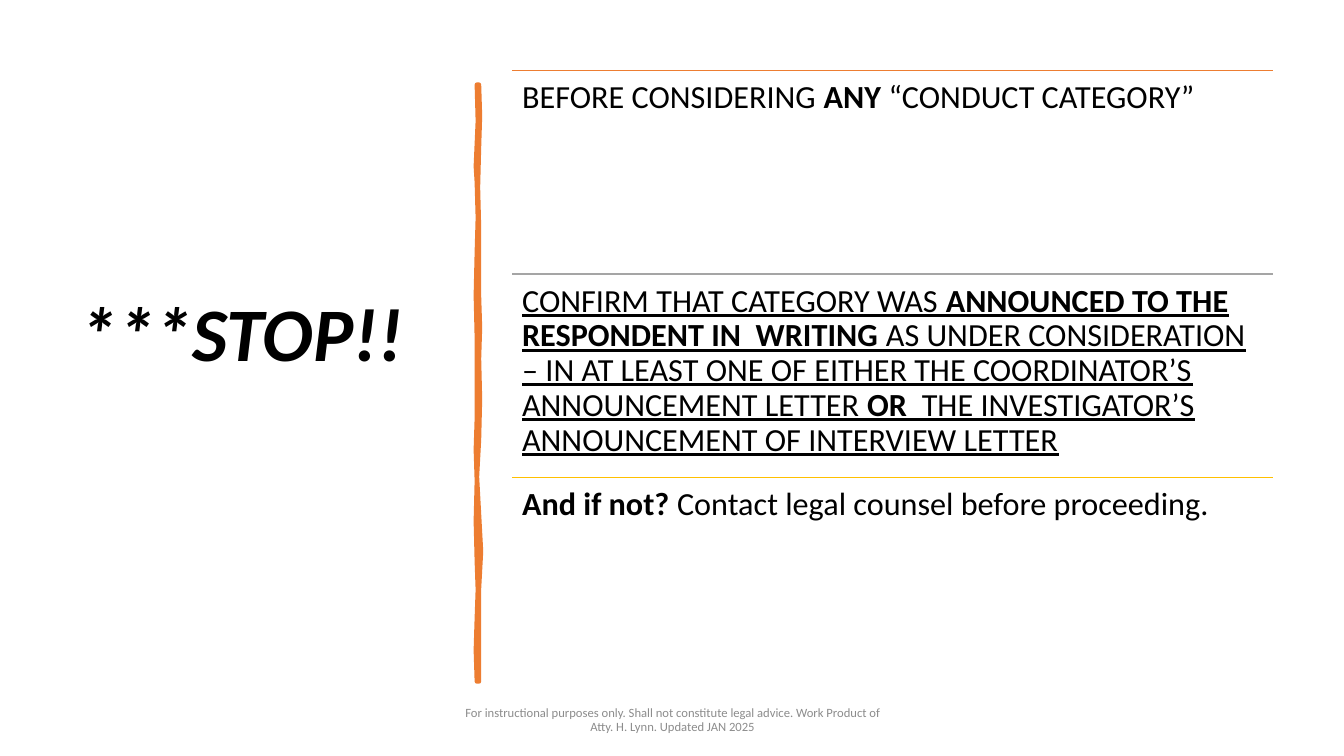
from lxml import etree
from pptx import Presentation
from pptx.dml.color import RGBColor
from pptx.enum.shapes import MSO_CONNECTOR
from pptx.enum.text import MSO_ANCHOR, MSO_AUTO_SIZE, PP_ALIGN
from pptx.oxml.ns import qn
from pptx.util import Inches, Pt

STRAIGHT = MSO_CONNECTOR.STRAIGHT
MIDDLE, TOP = MSO_ANCHOR.MIDDLE, MSO_ANCHOR.TOP
LEFT, CENTER = PP_ALIGN.LEFT, PP_ALIGN.CENTER
NO_FIT = MSO_AUTO_SIZE.NONE

BLACK = RGBColor(0x00, 0x00, 0x00)
MUTED = RGBColor(0x8C, 0x8C, 0x8C)
ORANGE = RGBColor(0xED, 0x7D, 0x31)
GRAY = RGBColor(0xA5, 0xA5, 0xA5)
GOLD = RGBColor(0xFF, 0xC0, 0x00)

TITLE_ONLY = 5
STEP_LEFT, STEP_TOP = 5.08, 0.7
STEP_WIDTH, STEP_HEIGHT = 7.55, 2.02

STEPS = [
    (ORANGE, False, [
        ("BEFORE CONSIDERING ", False),
        ("ANY ", True),
        ("“CONDUCT CATEGORY”", False),
    ]),
    (GRAY, True, [
        ("CONFIRM THAT CATEGORY WAS ", False),
        ("ANNOUNCED TO THE RESPONDENT IN  WRITING ", True),
        ("AS UNDER CONSIDERATION – IN AT LEAST ONE OF EITHER "
         "THE COORDINATOR’S ANNOUNCEMENT LETTER ", False),
        ("OR ", True),
        (" THE INVESTIGATOR’S ANNOUNCEMENT OF INTERVIEW LETTER", False),
    ]),
    (GOLD, False, [
        ("And if not? ", True),
        ("Contact legal counsel before proceeding.", False),
    ]),
]
DISCLAIMER = ("For instructional purposes only. Shall not constitute legal advice. "
              "Work Product of Atty. H. Lynn. Updated JAN 2025")

BRUSH_RIGHT = [
    (4.75, 0.84), (4.76, 1.15), (4.75, 1.46), (4.74, 1.86), (4.75, 2.26),
    (4.75, 2.94), (4.76, 3.25), (4.75, 3.56), (4.76, 3.96), (4.75, 4.36),
    (4.73, 4.73), (4.75, 5.1), (4.77, 5.47), (4.75, 5.84), (4.75, 6.76),
]
BRUSH_LEFT = [
    (4.73, 6.76), (4.72, 6.45), (4.73, 6.13), (4.74, 5.85), (4.73, 5.57),
    (4.72, 5.17), (4.73, 4.77), (4.72, 4.46), (4.73, 4.15), (4.73, 3.35),
    (4.72, 2.93), (4.73, 2.5), (4.74, 2.16), (4.73, 1.81), (4.72, 1.65),
    (4.74, 1.2), (4.73, 0.84),
]


def apply_format(target, values):
    for attribute, value in values.items():
        setattr(target, attribute, value)


def write_text(frame, runs, size, color, align=LEFT, anchor=TOP, **font_format):
    apply_format(frame, {"word_wrap": True, "auto_size": NO_FIT,
                         "vertical_anchor": anchor})
    paragraph = frame.paragraphs[0]
    apply_format(paragraph, {"alignment": align, "line_spacing": 0.9})
    for text, bold in runs:
        run = paragraph.add_run()
        run.text = text
        apply_format(run.font, {"name": "Calibri", "size": Pt(size),
                                "bold": bold, **font_format})
        run.font.color.rgb = color


def add_heading(slide):
    heading = slide.shapes.title
    apply_format(heading, {"left": Inches(0.69), "top": Inches(0.7),
                           "width": Inches(3.74), "height": Inches(6.11)})
    heading.text_frame.margin_bottom = Inches(0.87)
    write_text(heading.text_frame, [("***STOP!!", True)], 54, BLACK,
               anchor=MIDDLE, italic=True)


def add_brush_stroke(slide):
    start, *outline = [(Inches(x), Inches(y)) for x, y in BRUSH_RIGHT + BRUSH_LEFT]
    builder = slide.shapes.build_freeform(*start, scale=1.0)
    builder.add_line_segments(outline, close=True)
    stroke = builder.convert_to_shape()
    stroke.shadow.inherit = False
    stroke.fill.solid()
    stroke.fill.fore_color.rgb = ORANGE
    stroke.line.color.rgb = ORANGE
    stroke.line.width = Pt(3.25)


def add_rule(slide, top, color):
    rule = slide.shapes.add_connector(
        STRAIGHT, Inches(STEP_LEFT), Inches(top),
        Inches(STEP_LEFT + STEP_WIDTH), Inches(top))
    rule.line.color.rgb = color
    rule.line.width = Pt(1)
    etree.SubElement(rule._element.spPr, qn("a:effectLst"))


def add_step(slide, top, runs, underline):
    step = slide.shapes.add_textbox(Inches(STEP_LEFT), Inches(top),
                                    Inches(STEP_WIDTH), Inches(STEP_HEIGHT))
    sides = ("left", "top", "right", "bottom")
    apply_format(step.text_frame, {f"margin_{side}": Inches(0.1) for side in sides})
    write_text(step.text_frame, runs, 23, BLACK, underline=underline)


def add_disclaimer(slide):
    disclaimer = slide.shapes.add_textbox(Inches(4.42), Inches(6.95),
                                          Inches(4.5), Inches(0.4))
    write_text(disclaimer.text_frame, [(DISCLAIMER, False)], 9, MUTED,
               align=CENTER, anchor=MIDDLE)


def main():
    deck = Presentation()
    apply_format(deck, {"slide_width": Inches(13.33), "slide_height": Inches(7.5)})
    slide = deck.slides.add_slide(deck.slide_layouts[TITLE_ONLY])
    add_heading(slide)
    add_brush_stroke(slide)
    add_disclaimer(slide)
    for index, (color, underline, runs) in enumerate(STEPS):
        top = STEP_TOP + index * STEP_HEIGHT
        add_rule(slide, top, color)
        add_step(slide, top, runs, underline)
    deck.save("out.pptx")


if __name__ == "__main__":
    main()
